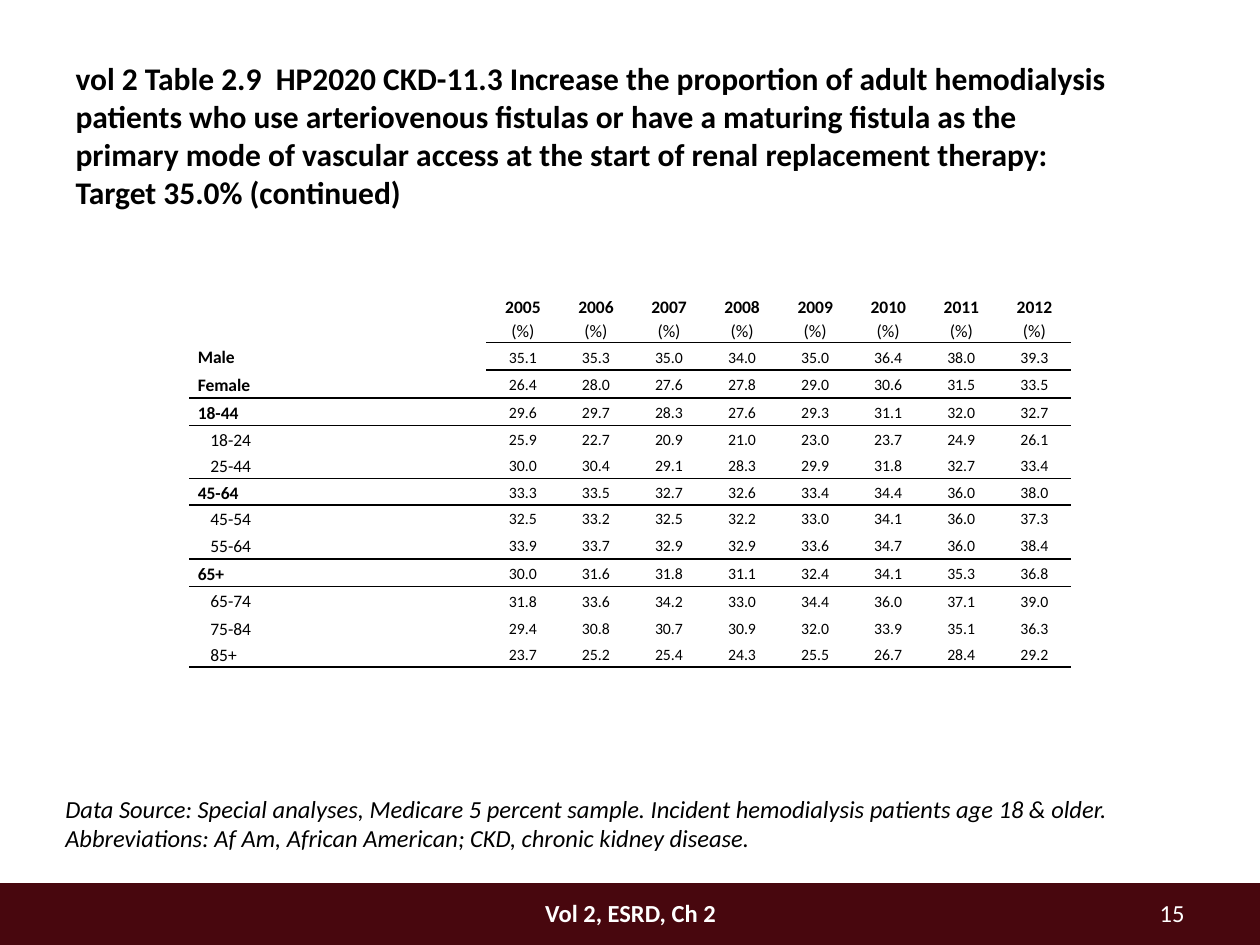
from typing import NamedTuple

from lxml import etree
from pptx import Presentation
from pptx.dml import color
from pptx.enum import shapes, text
from pptx.oxml import ns
from pptx.util import Inches, Pt

FONT = "Calibri"
BLACK, WHITE, MAROON = "000000", "FFFFFF", "48070E"
LEFT, CENTER, RIGHT = text.PP_ALIGN.LEFT, text.PP_ALIGN.CENTER, text.PP_ALIGN.RIGHT
NO_GRID_STYLE = "{2D5ABB26-0587-4C30-8999-92F81FD0307C}"


class Group(NamedTuple):
    """Rows between two rules; names in bold are headings, the rest are indented."""
    rows: dict[str, str]
    bold: tuple[str, ...]


class Box(NamedTuple):
    left: float
    top: float
    width: float
    height: float


TITLE = ("vol 2 Table 2.9  HP2020 CKD-11.3 Increase the proportion of adult hemodialysis "
         "patients who use arteriovenous fistulas or have a maturing fistula as the primary "
         "mode of vascular access at the start of renal replacement therapy: "
         "Target 35.0% (continued)")
SOURCE = ("Data Source: Special analyses, Medicare 5 percent sample. Incident hemodialysis "
          "patients age 18 & older. Abbreviations: Af Am, African American; CKD, chronic "
          "kidney disease.")
YEARS = range(2005, 2013)
GROUPS = [
    Group({"Male": "35.1 35.3 35.0 34.0 35.0 36.4 38.0 39.3",
           "Female": "26.4 28.0 27.6 27.8 29.0 30.6 31.5 33.5"}, ("Male", "Female")),
    Group({"18-44": "29.6 29.7 28.3 27.6 29.3 31.1 32.0 32.7",
           "18-24": "25.9 22.7 20.9 21.0 23.0 23.7 24.9 26.1",
           "25-44": "30.0 30.4 29.1 28.3 29.9 31.8 32.7 33.4"}, ("18-44",)),
    Group({"45-64": "33.3 33.5 32.7 32.6 33.4 34.4 36.0 38.0",
           "45-54": "32.5 33.2 32.5 32.2 33.0 34.1 36.0 37.3",
           "55-64": "33.9 33.7 32.9 32.9 33.6 34.7 36.0 38.4"}, ("45-64",)),
    Group({"65+": "30.0 31.6 31.8 31.1 32.4 34.1 35.3 36.8",
           "65-74": "31.8 33.6 34.2 33.0 34.4 36.0 37.1 39.0",
           "75-84": "29.4 30.8 30.7 30.9 32.0 33.9 35.1 36.3",
           "85+": "23.7 25.2 25.4 24.3 25.5 26.7 28.4 29.2"}, ("65+",)),
]
ROW_HEIGHTS = [0.38, *[0.22] * 3, *[0.21] * 4, *[0.22] * 3, *[0.21] * 2]
COLUMN_WIDTHS = [2.36, *[0.58] * len(YEARS)]


def rgb(value: str) -> color.RGBColor:
    return color.RGBColor.from_string(value)


def add_run(p, wording: str, size: float, bold=False, italic=False, fill=BLACK) -> None:
    r = p.add_run()
    r.text = wording
    r.font.name, r.font.size = FONT, Pt(size)
    r.font.bold, r.font.italic = bold, italic
    r.font.color.rgb = rgb(fill)


def fill_box(sp, box: Box, wording: str, size: float, align=LEFT, **style) -> None:
    """Place a text shape and write one top-anchored paragraph in it."""
    sp.left, sp.top, sp.width, sp.height = map(Inches, box)
    tf = sp.text_frame
    tf.word_wrap = True
    tf.auto_size = text.MSO_AUTO_SIZE.NONE
    tf.vertical_anchor = text.MSO_ANCHOR.TOP
    p = tf.paragraphs[0]
    p.alignment = align
    add_run(p, wording, size, **style)


def add_text(s, box: Box, wording: str, size: float, align=LEFT, **style) -> None:
    sp = s.shapes.add_textbox(*map(Inches, box))
    fill_box(sp, box, wording, size, align, **style)


def add_rule(cell, side: str) -> None:
    """Draw a 1 pt border; side is T or B."""
    ln = etree.SubElement(cell._tc.get_or_add_tcPr(), ns.qn(f"a:ln{side}"), w=str(Pt(1)))
    solid = etree.SubElement(ln, ns.qn("a:solidFill"))
    etree.SubElement(solid, ns.qn("a:srgbClr"), val=BLACK)


def format_cell(cell, margins=(0.07, 0.07), above=False, below=False) -> None:
    cell.margin_left, cell.margin_right = map(Inches, margins)
    cell.margin_top = cell.margin_bottom = 0
    cell.vertical_anchor = text.MSO_ANCHOR.MIDDLE
    if above:
        add_rule(cell, "T")
    if below:
        add_rule(cell, "B")
    cell.fill.background()


def write_line(p, wording: str, size: float, align=LEFT, bold=False) -> None:
    p.alignment, p.line_spacing = align, 1.15
    add_run(p, wording, size, bold)


def add_rates_table(s) -> None:
    frame = s.shapes.add_table(len(ROW_HEIGHTS), len(COLUMN_WIDTHS), Inches(1.5),
                               Inches(2.33), Inches(7), Inches(2.95))
    table = frame.table
    table.first_row = table.horz_banding = False
    next(frame._element.iter(ns.qn("a:tableStyleId"))).text = NO_GRID_STYLE
    for column, width in zip(table.columns, COLUMN_WIDTHS):
        column.width = Inches(width)
    for row, height in zip(table.rows, ROW_HEIGHTS):
        row.height = Inches(height)

    format_cell(table.cell(0, 0))
    for col, year in enumerate(YEARS, 1):
        cell = table.cell(0, col)
        format_cell(cell, below=True)
        write_line(cell.text_frame.paragraphs[0], str(year), 10, CENTER, True)
        write_line(cell.text_frame.add_paragraph(), "(%)", 10, CENTER)

    row = 0
    for group in GROUPS:
        names = list(group.rows)
        for name, rates in group.rows.items():
            row += 1
            first, last = name == names[0], name == names[-1]
            label = table.cell(row, 0)
            format_cell(label, above=first and row > 1, below=last)
            p = label.text_frame.paragraphs[0]
            bold = name in group.bold
            if not bold:
                p._p.get_or_add_pPr().set("marL", str(Inches(0.1)))
            write_line(p, name, 10, bold=bold)
            for col, rate in enumerate(rates.split(), 1):
                cell = table.cell(row, col)
                format_cell(cell, (0.02, 0.18), above=first, below=last)
                write_line(cell.text_frame.paragraphs[0], rate, 9, RIGHT)


def main() -> None:
    prs = Presentation()
    prs.slide_width, prs.slide_height = Inches(10), Inches(7.5)
    s = prs.slides.add_slide(prs.slide_layouts[5])

    bar = s.shapes.add_shape(shapes.MSO_SHAPE.RECTANGLE, 0, Inches(7.01), Inches(10),
                             Inches(0.49))
    bar.shadow.inherit = False
    bar.fill.solid()
    bar.fill.fore_color.rgb = rgb(MAROON)
    bar.line.fill.background()

    add_text(s, Box(8.5, 7.08, 1, 0.3), "15", 14, RIGHT, fill=WHITE)
    add_text(s, Box(3.92, 7.08, 2.17, 0.3), "Vol 2, ESRD, Ch 2", 14, CENTER, bold=True,
             fill=WHITE)
    add_text(s, Box(0.42, 6.25, 9.08, 0.58), SOURCE, 14, italic=True)
    add_rates_table(s)
    fill_box(s.shapes.title, Box(0.5, 0.42, 8.42, 1.08), TITLE, 18, bold=True)
    prs.save("out.pptx")


if __name__ == "__main__":
    main()
